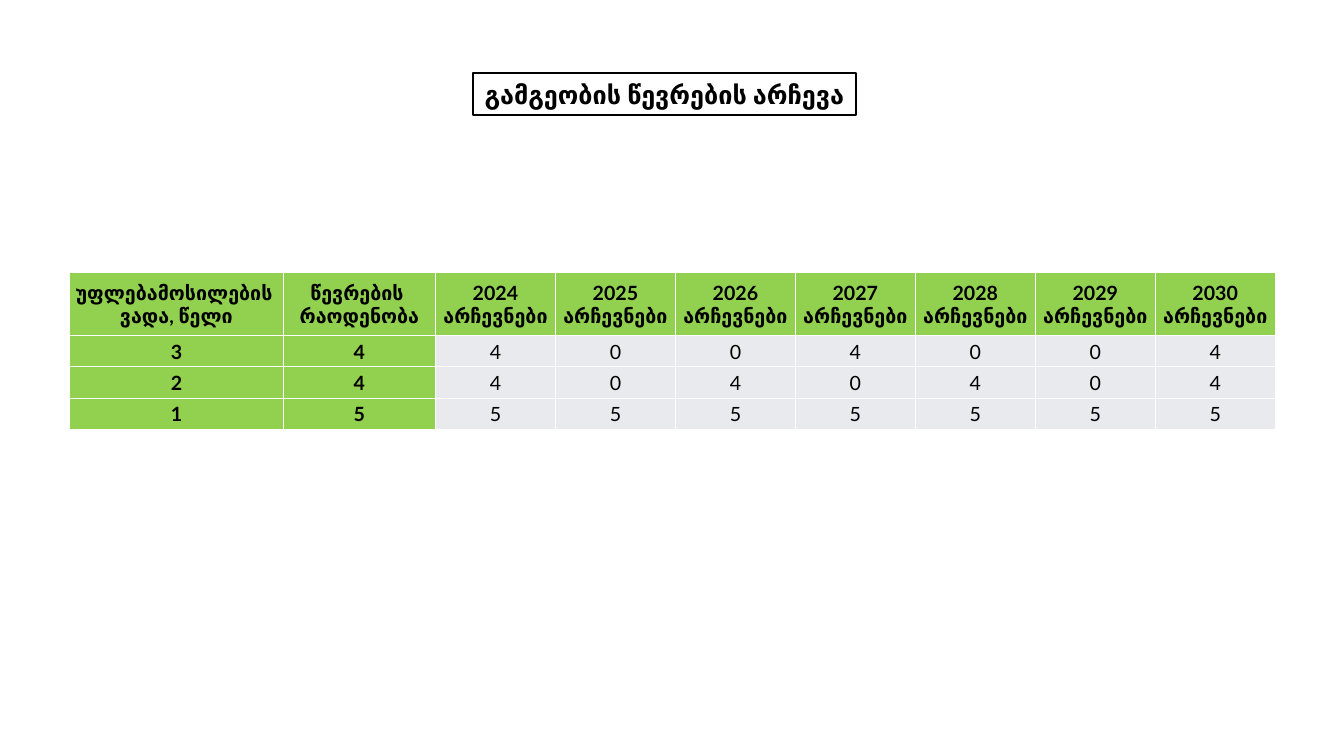
from dataclasses import dataclass

from lxml import etree
from pptx import Presentation
from pptx.dml.color import RGBColor
from pptx.enum.shapes import MSO_SHAPE
from pptx.enum.text import MSO_ANCHOR, PP_ALIGN
from pptx.oxml.ns import qn
from pptx.util import Pt

PX = 9144  # one hundredth of an inch
RECT = MSO_SHAPE.RECTANGLE
MIDDLE, BOTTOM = MSO_ANCHOR.MIDDLE, MSO_ANCHOR.BOTTOM
CENTER = PP_ALIGN.CENTER


@dataclass(frozen=True)
class Theme:
    font: str = "Lato"
    ink: str = "000000"
    paper: str = "FFFFFF"
    green: str = "92D050"
    gray: str = "E8EAED"
    title: int = 18
    body: int = 14
    frame: float = 1.5
    rule: int = 1


class Deck:
    def __init__(self, theme, width, height):
        self.theme = theme
        self.file = Presentation()
        self.file.slide_width = width * PX
        self.file.slide_height = height * PX
        self.slide = self.file.slides.add_slide(self.file.slide_layouts[6])

    def paint(self, item, color):
        item.fill.solid()
        item.fill.fore_color.rgb = RGBColor.from_string(color)

    def label(self, frame, text, size, bold, space=None):
        frame.text = text
        for para in frame.paragraphs:
            para.alignment = CENTER
            para.line_spacing = space
            font = para.font
            font.name, font.size, font.bold = self.theme.font, Pt(size), bold
            font.color.rgb = RGBColor.from_string(self.theme.ink)

    def title(self, text, *box):
        shape = self.slide.shapes.add_shape(RECT, *(n * PX for n in box))
        shape.shadow.inherit = False
        self.paint(shape, self.theme.paper)
        shape.line.color.rgb = RGBColor.from_string(self.theme.ink)
        shape.line.width = Pt(self.theme.frame)
        shape.text_frame.word_wrap = True
        shape.text_frame.vertical_anchor = BOTTOM
        self.label(shape.text_frame, text, self.theme.title, True, 0.9)

    def border(self, cell):
        props = cell._tc.get_or_add_tcPr()
        for i, side in enumerate(("lnL", "lnR", "lnT", "lnB")):
            line = etree.Element(qn(f"a:{side}"), w=str(Pt(self.theme.rule)))
            fill = etree.SubElement(line, qn("a:solidFill"))
            etree.SubElement(fill, qn("a:srgbClr"), val=self.theme.paper)
            props.insert(i, line)

    def cell(self, cell, text, key):
        cell.margin_left = cell.margin_right = cell.margin_top = PX
        cell.margin_bottom = 0
        cell.vertical_anchor = MIDDLE
        self.paint(cell, self.theme.green if key else self.theme.gray)
        self.border(cell)
        self.label(cell.text_frame, text, self.theme.body, key)

    def table(self, rows, left, top, widths, heights, keys):
        box = (left, top, sum(widths), sum(heights))
        table = self.slide.shapes.add_table(
            len(rows), len(widths), *(n * PX for n in box)).table
        for col, width in zip(table.columns, widths):
            col.width = width * PX
        for row, height in zip(table.rows, heights):
            row.height = height * PX
        for r, row in enumerate(rows):
            for c, value in enumerate(row):
                self.cell(table.cell(r, c), str(value), r == 0 or c < keys)


def main():
    deck = Deck(Theme(), 1333, 750)

    # Election table: term, seats, then seats up for election each year
    years = range(2024, 2031)
    head = ["უფლებამოსილების \nვადა, წელი", "წევრების \nრაოდენობა"]
    head += [f"{year}\vარჩევნები" for year in years]
    rows = [head]
    for term, seats in ((3, 4), (2, 4), (1, 5)):
        votes = [0 if (year - years[0]) % term else seats for year in years]
        rows.append([term, seats, *votes])
    deck.table(rows, 69, 270, [212, 151] + [119] * len(years),
               [63] + [31] * 3, keys=2)

    # Title
    deck.title("გამგეობის წევრების არჩევა", 469, 72, 380, 42)

    deck.file.save("out.pptx")


if __name__ == "__main__":
    main()
